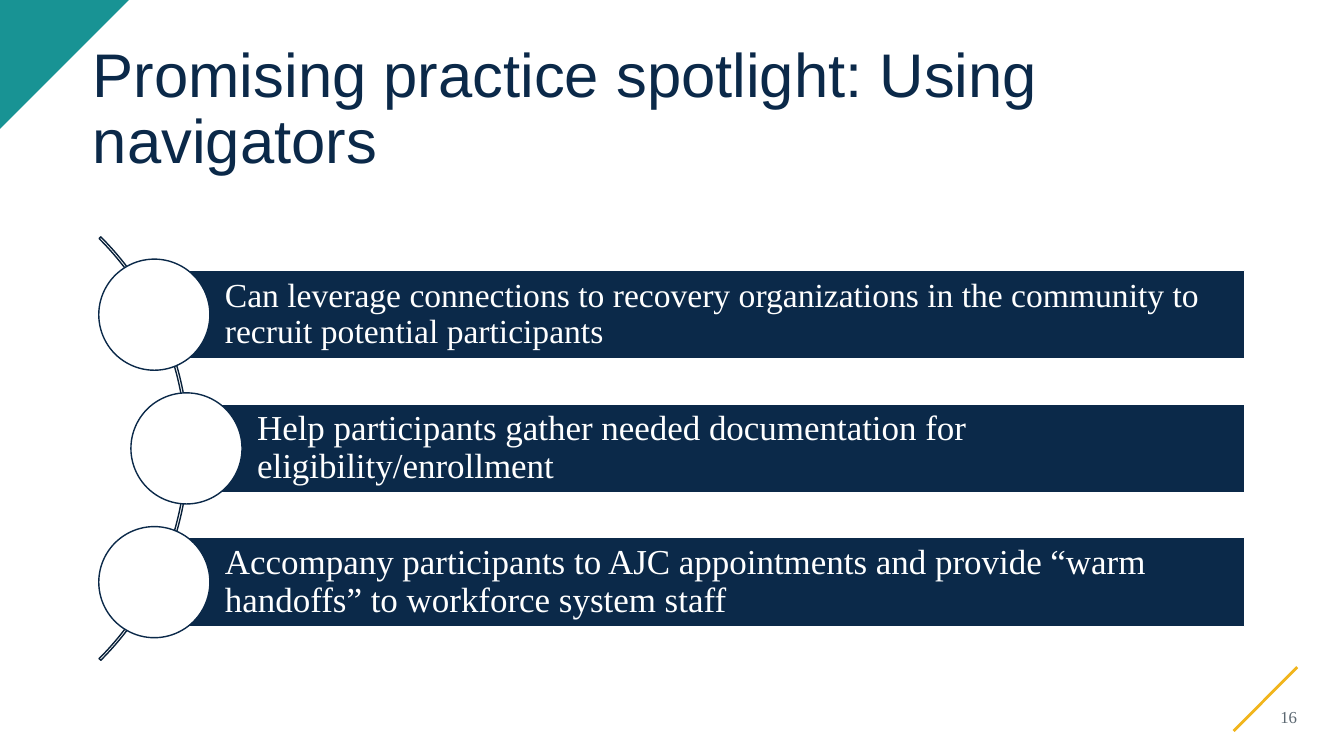
from pptx import Presentation
from pptx.dml.color import RGBColor
from pptx.enum import shapes as s, text as t
from pptx.oxml.ns import qn
from pptx.util import Cm, Pt

NAVY = RGBColor(0x0B, 0x29, 0x49)
ARC_NAVY = RGBColor(0x09, 0x21, 0x3A)
TEAL = RGBColor(0x18, 0x93, 0x94)
GOLD = RGBColor(0xF1, 0xB5, 0x1C)
GREY = RGBColor(0x5B, 0x67, 0x71)
WHITE = RGBColor(0xFF, 0xFF, 0xFF)


def style_shape(shape, fill, line):
    shape.shadow.inherit = False
    if fill is None:
        shape.fill.background()
    else:
        shape.fill.solid()
        shape.fill.fore_color.rgb = fill
    if line is None:
        shape.line.fill.background()
    else:
        shape.line.color.rgb = line
        shape.line.width = Pt(1)


def write(shape, wording, size, font, color, align, spacing, margins):
    frame = shape.text_frame
    frame.text = wording
    left, top, right, bottom = (Cm(m) for m in margins)
    frame_format = {
        "word_wrap": True, "auto_size": t.MSO_AUTO_SIZE.NONE,
        "vertical_anchor": t.MSO_ANCHOR.MIDDLE,
        "margin_left": left, "margin_top": top,
        "margin_right": right, "margin_bottom": bottom,
    }
    for name, value in frame_format.items():
        setattr(frame, name, value)
    paragraph = frame.paragraphs[0]
    paragraph.alignment = align
    paragraph.line_spacing = spacing
    for name, value in {"size": Pt(size), "name": font}.items():
        setattr(paragraph.font, name, value)
    paragraph.font.color.rgb = color


deck = Presentation()
deck.slide_width, deck.slide_height = Cm(33.87), Cm(19.05)
slide = deck.slides.add_slide(deck.slide_layouts[5])
parts = slide.shapes

# Gold diagonal beside the page number
diagonal = parts.add_connector(s.MSO_CONNECTOR.STRAIGHT,
                               Cm(31.09), Cm(18.42), Cm(32.69), Cm(16.81))
diagonal.line.color.rgb = GOLD
diagonal.line.width = Pt(2)
sp_pr = diagonal._element.spPr
sp_pr.append(sp_pr.makeelement(qn("a:effectLst"), {}))

# Teal corner
outline = parts.build_freeform(0, 0)
outline.add_line_segments([(Cm(3.25), 0), (0, Cm(3.25))], close=True)
style_shape(outline.convert_to_shape(), TEAL, None)

# Title
title = parts.title
title_place = {"left": Cm(2.34), "top": Cm(0.94), "width": Cm(29.21), "height": Cm(3.68)}
for name, value in title_place.items():
    setattr(title, name, value)
write(title, "Promising practice spotlight: Using navigators", 44, "Arial", NAVY,
      t.PP_ALIGN.LEFT, 0.9, (0, 0, 0, 0))

# Thin arc behind the circles
arc = parts.add_shape(s.MSO_SHAPE.BLOCK_ARC, Cm(-10.34), Cm(3.76), Cm(15.09), Cm(15.09))
for index, value in enumerate((189, 27, 0.004)):
    arc.adjustments[index] = value
style_shape(arc, None, ARC_NAVY)

# Practices: a bar with a circle centred on its left edge
practices = [
    (3.89, 24, "Can leverage connections to recovery organizations in the community "
               "to recruit potential participants"),
    (4.7, 25, "Help participants gather needed documentation for eligibility/enrollment"),
    (3.89, 25, "Accompany participants to AJC appointments and provide “warm handoffs” "
               "to workforce system staff"),
]
BAR_TOP, BAR_RIGHT, BAR_HEIGHT, BAR_PITCH, CIRCLE = 6.81, 31.37, 2.24, 3.37, 2.8
for row, (left, size, wording) in enumerate(practices):
    top = BAR_TOP + row * BAR_PITCH
    bar = parts.add_shape(s.MSO_SHAPE.RECTANGLE, Cm(left), Cm(top),
                          Cm(BAR_RIGHT - left), Cm(BAR_HEIGHT))
    style_shape(bar, NAVY, WHITE)
    write(bar, wording, size, "Times New Roman", WHITE,
          t.PP_ALIGN.LEFT, 0.9, (1.78, 0.18, 0.18, 0.18))
    circle = parts.add_shape(s.MSO_SHAPE.OVAL, Cm(left - CIRCLE / 2),
                             Cm(top + (BAR_HEIGHT - CIRCLE) / 2), Cm(CIRCLE), Cm(CIRCLE))
    style_shape(circle, WHITE, NAVY)

# Page number
page_number = parts.add_textbox(Cm(31.24), Cm(17.12), Cm(1.45), Cm(1.9))
write(page_number, "16", 12, "Times New Roman", GREY, t.PP_ALIGN.RIGHT, 1.0, (0, 0, 0, 0))

deck.save("out.pptx")
